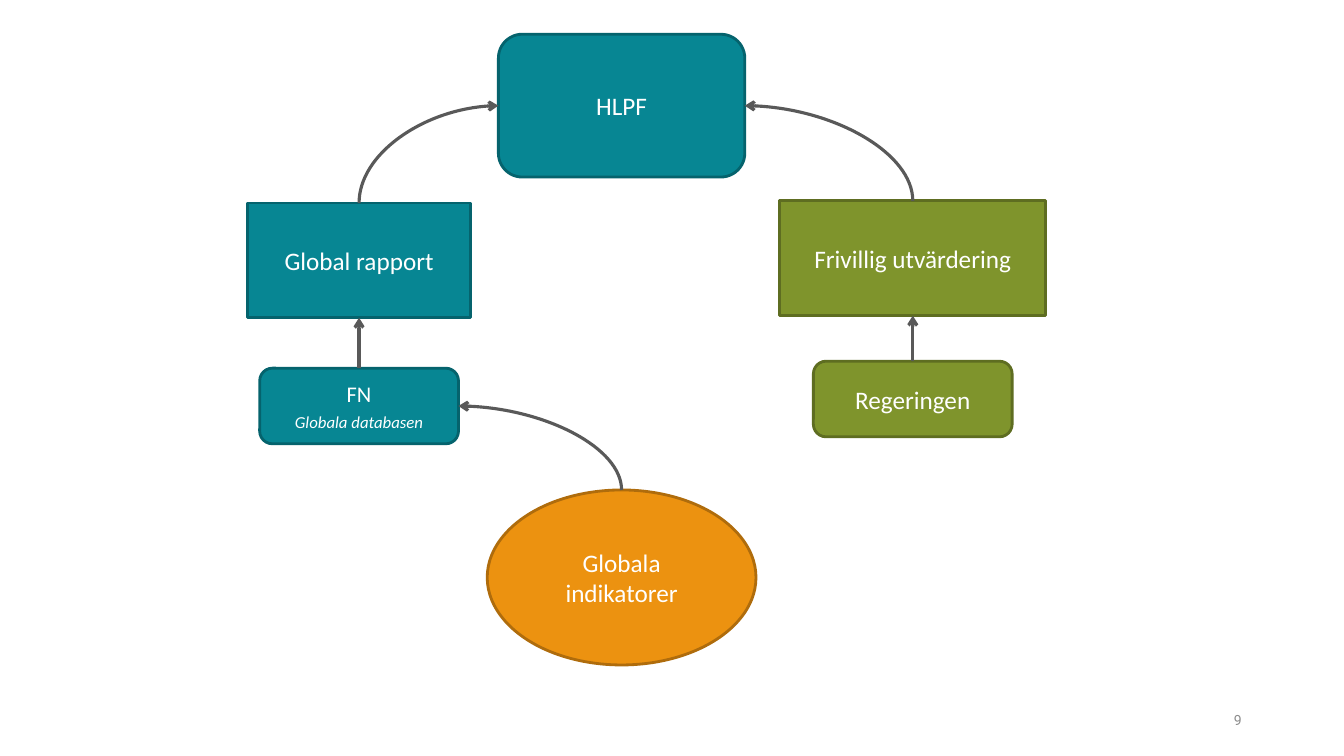
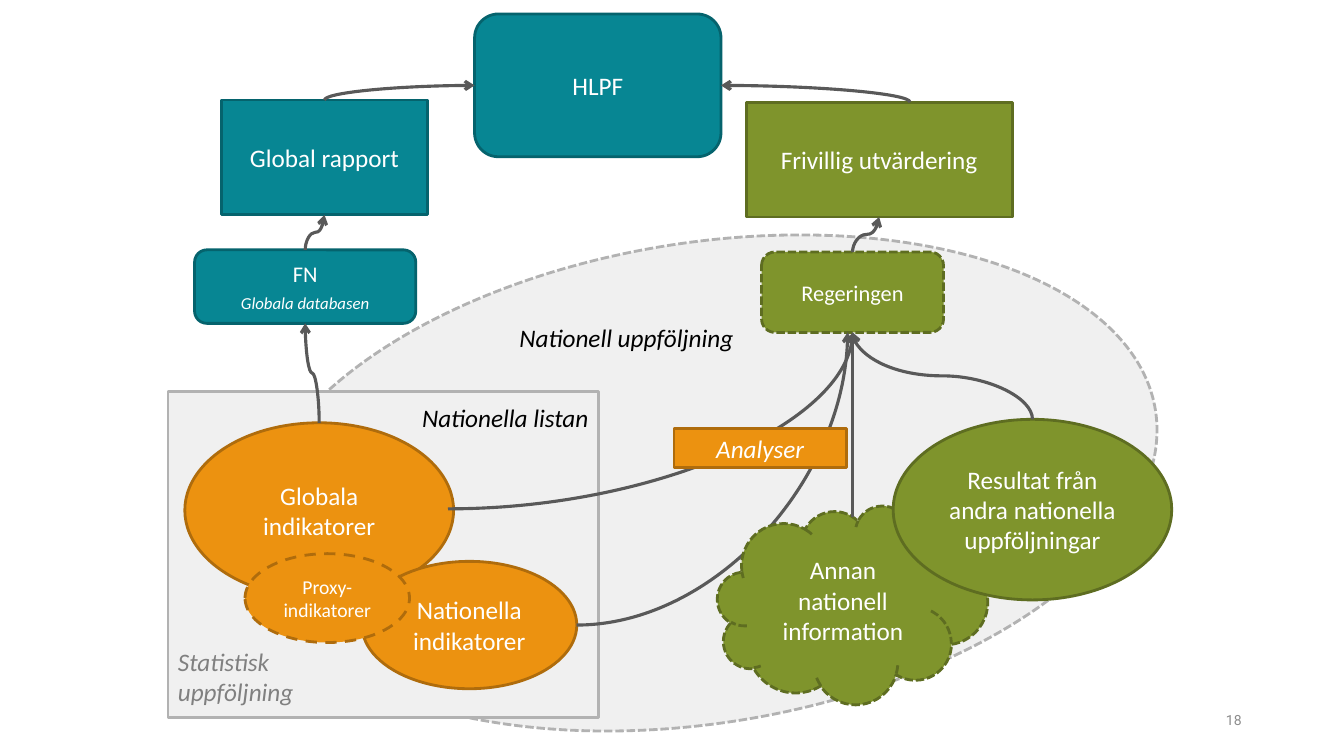
from lxml import etree
from pptx import Presentation
from pptx.dml.color import RGBColor
from pptx.enum.dml import MSO_LINE
from pptx.enum.shapes import MSO_CONNECTOR, MSO_SHAPE
from pptx.enum.text import MSO_ANCHOR, PP_ALIGN
from pptx.oxml.ns import qn
from pptx.util import Pt

RECTANGLE, ROUNDED = MSO_SHAPE.RECTANGLE, MSO_SHAPE.ROUNDED_RECTANGLE
ELLIPSE, CLOUD = MSO_SHAPE.OVAL, MSO_SHAPE.CLOUD
STRAIGHT, CURVE = MSO_CONNECTOR.STRAIGHT, MSO_CONNECTOR.CURVE
SHORT_DASH, DASH = MSO_LINE.SQUARE_DOT, MSO_LINE.DASH
ANCHOR_TOP, ANCHOR_MIDDLE, ANCHOR_BOTTOM = MSO_ANCHOR.TOP, MSO_ANCHOR.MIDDLE, MSO_ANCHOR.BOTTOM
LEFT, CENTER, RIGHT = PP_ALIGN.LEFT, PP_ALIGN.CENTER, PP_ALIGN.RIGHT
TOP_SITE, LEFT_SITE, BOTTOM_SITE, RIGHT_SITE = range(4)

WHITE = RGBColor(0xFF, 0xFF, 0xFF)
BLACK = RGBColor(0x00, 0x00, 0x00)
GRAY = RGBColor(0x80, 0x80, 0x80)
NUMBER_GRAY = RGBColor(0x8C, 0x8C, 0x8C)
ARROW_GRAY = RGBColor(0x59, 0x59, 0x59)
# Each pair is fill and outline.
TEAL = RGBColor(0x07, 0x86, 0x93), RGBColor(0x05, 0x63, 0x6D)
GREEN = RGBColor(0x7F, 0x94, 0x2C), RGBColor(0x5E, 0x6D, 0x21)
ORANGE = RGBColor(0xEC, 0x92, 0x10), RGBColor(0xAF, 0x6C, 0x0C)
PALE = RGBColor(0xF0, 0xF0, 0xF0), RGBColor(0xB2, 0xB2, 0xB2)

BODY_FONT, NUMBER_FONT = "Calibri", "Roboto"


def write(shape, lines, size=18, color=WHITE, italic=False, align=CENTER,
          anchor=ANCHOR_MIDDLE, font=BODY_FONT):
    """Fill the shape with one paragraph per line and return the paragraphs."""
    frame = shape.text_frame
    frame.word_wrap = True
    frame.vertical_anchor = anchor
    frame.text = "\n".join(lines)
    for paragraph in frame.paragraphs:
        paragraph.alignment = align
        paragraph.font.name = font
        paragraph.font.size = Pt(size)
        paragraph.font.italic = italic
        paragraph.font.color.rgb = color
    return frame.paragraphs


def add_node(slide, kind, box, colors, text="", dash=None, **style):
    shape = slide.shapes.add_shape(kind, *map(Pt, box))
    shape.shadow.inherit = False
    fill, outline = colors
    shape.fill.solid()
    shape.fill.fore_color.rgb = fill
    shape.line.color.rgb = outline
    shape.line.width = Pt(2)
    if dash:
        shape.line.dash_style = dash
    if text:
        write(shape, [text], **style)
    return shape


def add_label(slide, box, lines, **style):
    write(slide.shapes.add_textbox(*map(Pt, box)), lines, **style)


def add_page_number(slide, number):
    add_label(slide, (678, 500, 216, 29), [str(number)], size=10,
              color=NUMBER_GRAY, align=RIGHT, font=NUMBER_FONT)


def site(shape, side):
    """Middle of one side of a shape, in points."""
    x, y, width, height = (length.pt for length in
                           (shape.left, shape.top, shape.width, shape.height))
    return {TOP_SITE: (x + width / 2, y),
            LEFT_SITE: (x, y + height / 2),
            BOTTOM_SITE: (x + width / 2, y + height),
            RIGHT_SITE: (x + width, y + height / 2)}[side]


def add_arrow(slide, kind, start, end):
    connector = slide.shapes.add_connector(kind, *map(Pt, start + end))
    connector.line.color.rgb = ARROW_GRAY
    connector.line.width = Pt(2.25)
    properties = connector.element.spPr
    line = properties.find(qn("a:ln"))
    etree.SubElement(line, qn("a:tailEnd"), type="arrow")
    etree.SubElement(properties, qn("a:effectLst"))
    return connector


def bend(connector):
    """Make a curve a single quarter turn."""
    geometry = connector.element.spPr.find(qn("a:prstGeom"))
    geometry.set("prst", "curvedConnector2")


def add_rising_curve(slide, start, end, quarter=False):
    """Curve that leaves upwards: an S, or a quarter turn."""
    connector = add_arrow(slide, CURVE, start, end)
    if quarter:
        bend(connector)
    run, rise = abs(end[0] - start[0]), abs(end[1] - start[1])
    connector.left = Pt((start[0] + end[0] - rise) / 2)
    connector.top = Pt((start[1] + end[1] - run) / 2)
    connector.width, connector.height = Pt(rise), Pt(run)
    transform = connector.element.spPr.find(qn("a:xfrm"))
    transform.set("rot", str(270 * 60000))
    transform.set("flipH", "0")
    transform.set("flipV", "1" if end[0] < start[0] else "0")


def add_sideways_curve(slide, start, end):
    """Quarter turn that leaves sideways and arrives vertically."""
    bend(add_arrow(slide, CURVE, start, end))


def link_up(slide, lower, upper):
    """Arrow from the top of one box to the bottom of the box above."""
    start, end = site(lower, TOP_SITE), site(upper, BOTTOM_SITE)
    if abs(start[0] - end[0]) < 0.1:
        connector = add_arrow(slide, STRAIGHT, start, end)
        connector.begin_connect(lower, TOP_SITE)
        connector.end_connect(upper, BOTTOM_SITE)
    else:
        add_rising_curve(slide, start, end)


def add_reporting_chain(slide, forum_box, report_box, un_box, review_box,
                        government_box, review_exit=0, **government_style):
    """Both reporting paths up to the forum; returns the two lowest boxes."""
    forum = add_node(slide, ROUNDED, forum_box, TEAL, "HLPF")
    report = add_node(slide, RECTANGLE, report_box, TEAL, "Global rapport")
    review = add_node(slide, RECTANGLE, review_box, GREEN, "Frivillig utvärdering")
    government = add_node(slide, ROUNDED, government_box, GREEN, "Regeringen",
                          **government_style)
    un = add_node(slide, ROUNDED, un_box, TEAL)
    database = write(un, ["FN", "Globala databasen"], size=16)[1]
    database.space_before = Pt(4)
    database.font.size = Pt(12)
    database.font.italic = True

    add_rising_curve(slide, site(report, TOP_SITE), site(forum, LEFT_SITE), quarter=True)
    x, y = site(review, TOP_SITE)
    add_rising_curve(slide, (x + review_exit, y), site(forum, RIGHT_SITE), quarter=True)
    link_up(slide, un, report)
    link_up(slide, government, review)
    return un, government


def add_national_list(slide, box):
    x, y, width, height = box
    panel = add_node(slide, RECTANGLE, box, PALE, "Nationella listan", color=BLACK,
                     italic=True, align=RIGHT, anchor=ANCHOR_TOP)
    panel.text_frame.margin_top = Pt(8)
    add_label(slide, (x, y + height - 58, width / 2, 54), ["Statistisk", "uppföljning"],
              color=GRAY, italic=True, align=LEFT, anchor=ANCHOR_BOTTOM)


def build_global_slide(slide):
    add_page_number(slide, 9)
    indicators = add_node(slide, ELLIPSE, (348, 350, 192, 125), ORANGE,
                          "Globala indikatorer")
    un, _ = add_reporting_chain(
        slide,
        forum_box=(356, 24.5, 176, 102),
        report_box=(177, 145, 159, 82),
        un_box=(185.5, 263, 142, 54),
        review_box=(557, 143.5, 190, 82),
        government_box=(581, 258, 142, 54))
    add_rising_curve(slide, site(indicators, TOP_SITE), site(un, RIGHT_SITE), quarter=True)


def build_national_slide(slide):
    add_page_number(slide, 18)
    area = add_node(slide, ELLIPSE, (175.5, 173.5, 654, 343), PALE, dash=SHORT_DASH)
    area.rotation = -9.2
    add_label(slide, (331, 227, 200, 32), ["Nationell uppföljning"], color=BLACK,
              italic=True, align=RIGHT, anchor=ANCHOR_TOP)
    add_national_list(slide, (120, 279.5, 307.5, 233))
    global_indicators = add_node(slide, ELLIPSE, (132, 302, 192, 125), ORANGE,
                                 "Globala indikatorer")
    un, government = add_reporting_chain(
        slide,
        forum_box=(339, 10, 176, 102),
        report_box=(158, 71.5, 147.5, 82),
        un_box=(139, 178.5, 158, 52.5),
        review_box=(533, 73, 190, 82),
        government_box=(544, 180, 130, 57.5),
        review_exit=22, dash=SHORT_DASH, size=16)
    target = site(government, BOTTOM_SITE)

    national = add_node(slide, ELLIPSE, (258.5, 401, 153.5, 91), ORANGE,
                        "Nationella indikatorer")
    add_sideways_curve(slide, site(national, RIGHT_SITE), (target[0] - 3.5, target[1]))
    add_node(slide, CLOUD, (512.5, 361, 193, 142), GREEN, "Annan nationell information",
             dash=SHORT_DASH)
    information_arrow = add_arrow(slide, STRAIGHT, (target[0], 369), target)
    information_arrow.end_connect(government, BOTTOM_SITE)
    add_sideways_curve(slide, (320, 363.5), target)
    add_rising_curve(slide, site(global_indicators, TOP_SITE), site(un, BOTTOM_SITE))
    add_node(slide, RECTANGLE, (481.5, 306, 123, 28), ORANGE, "Analyser", italic=True)
    add_node(slide, ELLIPSE, (175, 395.5, 117.5, 63.5), ORANGE, "Proxy-indikatorer",
             dash=DASH, size=14)
    results = add_node(slide, ELLIPSE, (638, 299.5, 199, 129), GREEN,
                       "Resultat från andra nationella uppföljningar")
    add_rising_curve(slide, site(results, TOP_SITE), target)


def main():
    presentation = Presentation()
    presentation.slide_width, presentation.slide_height = Pt(960), Pt(540)
    blank = presentation.slide_layouts[6]
    for build in (build_global_slide, build_national_slide):
        build(presentation.slides.add_slide(blank))
    presentation.save("out.pptx")


if __name__ == "__main__":
    main()
